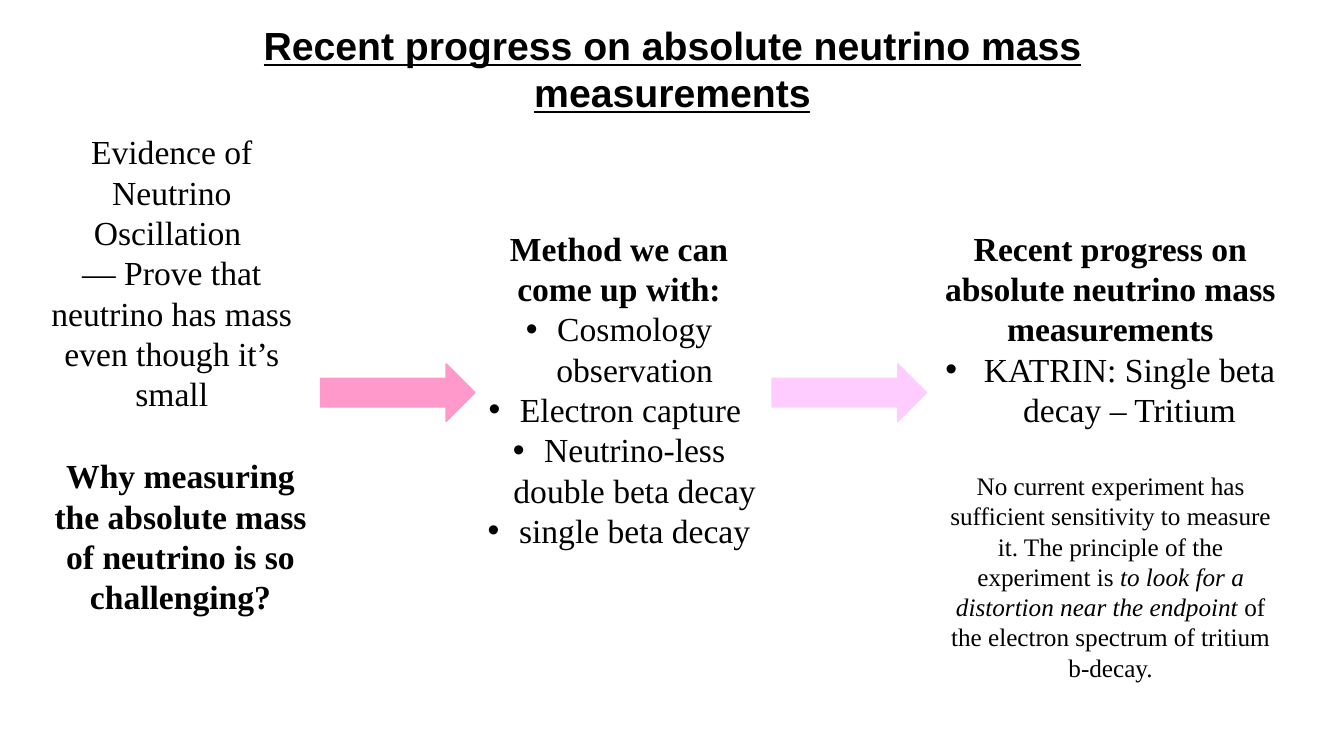
from lxml.etree import SubElement
from pptx import Presentation
from pptx.dml.color import RGBColor
from pptx.enum.shapes import MSO_SHAPE
from pptx.enum.text import MSO_ANCHOR, MSO_AUTO_SIZE, PP_ALIGN
from pptx.oxml.ns import qn
from pptx.util import Cm, Pt


def color(hex_string):
    """Turn a hex string into a colour."""
    return RGBColor.from_string(hex_string)


class SlideBuilder:
    """Hold the text style and the current slide."""

    text_color = "000000"
    body_font = "Times New Roman"
    title_font = "Arial"

    def __init__(self, presentation):
        """Add a slide with a title and two content placeholders."""
        self.slide = presentation.slides.add_slide(presentation.slide_layouts[3])

    def place(self, shape, box):
        """Move a text shape to its box and set up its frame."""
        shape.left, shape.top, shape.width, shape.height = map(Cm, box)
        frame = shape.text_frame
        frame.word_wrap = True
        frame.auto_size = MSO_AUTO_SIZE.NONE
        frame.vertical_anchor = MSO_ANCHOR.TOP
        return frame

    def add_run(self, paragraph, text, size, font, bold=False, italic=False, underline=False):
        """Add one formatted run to a paragraph."""
        run = paragraph.add_run()
        run.text = text
        run.font.name = font
        run.font.size = Pt(size)
        run.font.bold = bold
        run.font.italic = italic
        run.font.underline = underline
        run.font.color.rgb = color(self.text_color)

    def center(self, paragraph):
        """Center a paragraph and remove its outer spacing."""
        paragraph.alignment = PP_ALIGN.CENTER
        paragraph.space_before = paragraph.space_after = Pt(0)

    def set_bullet(self, paragraph, indent):
        """Give a paragraph a hanging bullet, or none when indent is zero."""
        properties = paragraph._p.get_or_add_pPr()
        properties.set("marL", str(Cm(indent)))
        properties.set("indent", str(-Cm(indent)))
        if indent:
            SubElement(properties, qn("a:buFont")).set("typeface", "Arial")
            SubElement(properties, qn("a:buChar")).set("char", "•")
        else:
            SubElement(properties, qn("a:buNone"))

    def title(self, text, box):
        """Fill the title placeholder."""
        paragraph = self.place(self.slide.shapes.title, box).paragraphs[0]
        self.center(paragraph)
        self.add_run(paragraph, text, 28, self.title_font, bold=True, underline=True)

    def bullet_list(self, index, heading, items, box, indent):
        """Fill a content placeholder with a bold heading and bullets."""
        frame = self.place(self.slide.placeholders[index], box)
        for number, text in enumerate([heading, *items]):
            paragraph = frame.add_paragraph() if number else frame.paragraphs[0]
            self.center(paragraph)
            self.set_bullet(paragraph, indent if number else 0)
            self.add_run(paragraph, text, 24, self.body_font, bold=number == 0)

    def text(self, paragraphs, box, size=24):
        """Add a text box from paragraphs of (text, style) runs."""
        frame = self.place(self.slide.shapes.add_textbox(*map(Cm, box)), box)
        for number, runs in enumerate(paragraphs):
            paragraph = frame.add_paragraph() if number else frame.paragraphs[0]
            self.center(paragraph)
            for text, style in runs:
                self.add_run(paragraph, text, size, self.body_font, **style)

    def arrow(self, left, fill):
        """Add a block arrow between two columns."""
        box = map(Cm, (left, 9.17, 3.89, 1.45))
        shape = self.slide.shapes.add_shape(MSO_SHAPE.RIGHT_ARROW, *box)
        shape.shadow.inherit = False
        shape.fill.solid()
        shape.fill.fore_color.rgb = color(fill)
        shape.line.color.rgb = color(fill)
        shape.line.width = Pt(1)


def main():
    """Build and save the slide."""
    presentation = Presentation()
    presentation.slide_width = Cm(33.87)
    presentation.slide_height = Cm(19.05)
    builder = SlideBuilder(presentation)

    topic = "Recent progress on absolute neutrino mass measurements"
    builder.title(topic, (4.55, 0.41, 24.79, 2.64))

    builder.text(
        [
            [("Evidence of Neutrino Oscillation ", {})],
            [("― Prove that neutrino has mass even though it’s small", {})],
        ],
        (0.81, 3.18, 7.04, 7.44),
    )
    builder.text(
        [[("Why measuring the absolute mass of neutrino is so challenging?", {"bold": True})]],
        (1.07, 11.35, 6.96, 4.37),
    )

    methods = [
        "Cosmology observation",
        "Electron capture ",
        "Neutrino-less double beta decay",
        "single beta decay",
    ]
    builder.bullet_list(
        1, "Method we can come up with:", methods, (11.84, 5.61, 7.52, 8.46), 0.79
    )
    builder.bullet_list(
        2, topic, ["KATRIN: Single beta decay – Tritium"], (23.14, 5.61, 9.68, 5.38), 0.97
    )

    for left, fill in ((8.08, "FF99CC"), (19.46, "FFCCFF")):
        builder.arrow(left, fill)

    builder.text(
        [
            [
                (
                    "No current experiment has sufficient sensitivity to measure it. "
                    "The principle of the experiment is ",
                    {},
                ),
                ("to look for a distortion near the endpoint ", {"italic": True}),
                ("of the electron spectrum of tritium b-decay.", {}),
            ]
        ],
        (23.62, 11.73, 8.74, 5.64),
        size=18,
    )
    presentation.save("out.pptx")


if __name__ == "__main__":
    main()
